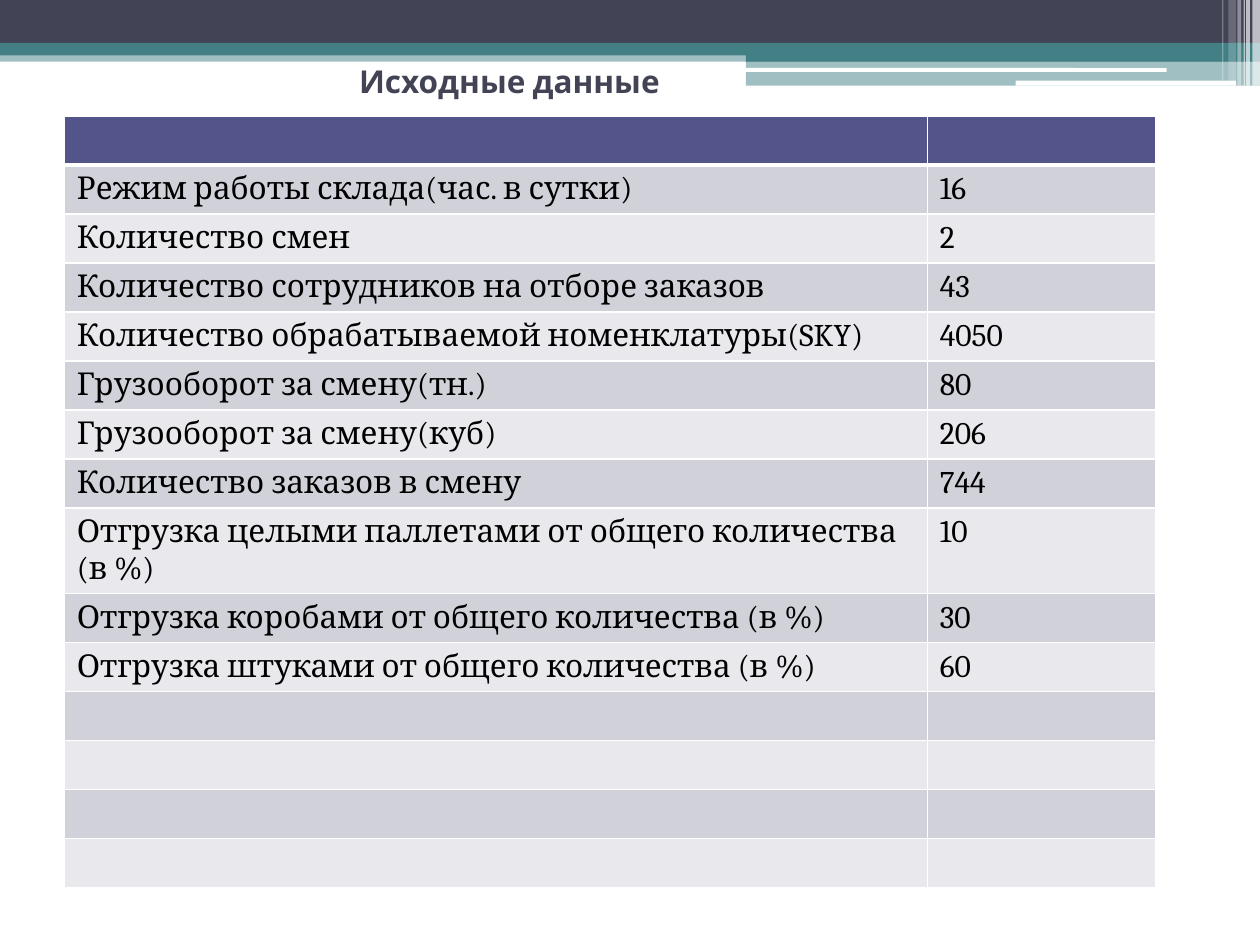
from lxml import etree
from pptx import Presentation
from pptx.dml.color import RGBColor
from pptx.enum import shapes, text
from pptx.oxml.ns import qn
from pptx.util import Inches, Pt

COLORS = {
    "dark": "424456", "teal": "438086", "white": "FFFFFF", "black": "000000",
    "header": "53548A", "odd": "D1D1DA", "even": "E9E9ED",
}


def paint(fill, name, alpha=100):
    fill.solid()
    fill.fore_color.rgb = RGBColor.from_string(COLORS[name])
    if alpha < 100:
        clr = fill._xPr.find(".//" + qn("a:srgbClr"))
        etree.SubElement(clr, qn("a:alpha"), val=str(alpha * 1000))


def add_border(cell, side, width):
    ln = etree.SubElement(cell._tc.get_or_add_tcPr(), qn(f"a:ln{side}"), w=str(Pt(width)))
    fill = etree.SubElement(ln, qn("a:solidFill"))
    etree.SubElement(fill, qn("a:srgbClr"), val=COLORS["white"])


prs = Presentation()
prs.slide_width, prs.slide_height = Inches(10), Inches(7.5)
s = prs.slides.add_slide(prs.slide_layouts[5])

# Header bands and the stripes in the corner: left, top, width, height, colour, opacity
RECT = shapes.MSO_SHAPE.RECTANGLE
ROUND = shapes.MSO_SHAPE.ROUNDED_RECTANGLE
bands = [
    (RECT, 0, 0.4, 10, 0.09, "teal", 50),
    (RECT, 0, 0, 10, 0.34, "dark", 100),
    (RECT, 0, 0.34, 10, 0.1, "teal", 100),
    (RECT, 5.92, 0.39, 4.08, 0.1, "teal", 100),
    (RECT, 5.92, 0.48, 4.08, 0.2, "teal", 50),
    (ROUND, 5.91, 0.54, 3.35, 0.03, "white", 100),
    (ROUND, 8.06, 0.64, 1.75, 0.04, "white", 100),
]
stripes = [
    (9.94, 0.06, 0.68, 65), (9.89, 0.03, 0.68, 65), (9.87, 0.01, 0.68, 60),
    (9.82, 0.03, 0.68, 40), (9.75, 0.06, 0.64, 20), (9.7, 0.01, 0.64, 30),
]
bands += [(RECT, x, 0, w, h, "white", alpha) for x, w, h, alpha in stripes]
for kind, x, y, w, h, color, alpha in bands:
    sp = s.shapes.add_shape(kind, Inches(x), Inches(y), Inches(w), Inches(h))
    sp.shadow.inherit = False
    sp.line.fill.background()
    paint(sp.fill, color, alpha)

# Title, in front of the bands
title = s.shapes.title
s.shapes._spTree.append(title._element)
title.left, title.top = Inches(0.5), Inches(0.3)
title.width, title.height = Inches(7.57), Inches(0.54)
tf = title.text_frame
tf.text = "Исходные данные"
tf.vertical_anchor = text.MSO_ANCHOR.BOTTOM
tf.margin_left = Inches(2.35)
p = tf.paragraphs[0]
p.alignment = text.PP_ALIGN.LEFT
font = p.runs[0].font
font.name, font.size, font.bold = "Cabin", Pt(18), True
font.color.rgb = RGBColor.from_string(COLORS["dark"])

# Table of warehouse data
rows = [
    ("", ""),
    ("Режим работы склада(час. в сутки)", "16"),
    ("Количество смен", "2"),
    ("Количество сотрудников на отборе заказов", "43"),
    ("Количество обрабатываемой номенклатуры(SKY)", "4050"),
    ("Грузооборот за смену(тн.)", "80"),
    ("Грузооборот за смену(куб)", "206"),
    ("Количество заказов в смену", "744"),
    ("Отгрузка целыми паллетами от общего количества (в %)", "10"),
    ("Отгрузка коробами от общего количества (в %)", "30"),
    ("Отгрузка штуками от общего количества (в %)", "60"),
] + [("", "")] * 4
table = s.shapes.add_table(len(rows), 2, Inches(0.51), Inches(0.92),
                           Inches(8.66), Inches(6)).table
table.columns[0].width, table.columns[1].width = Inches(6.85), Inches(1.81)

for i, values in enumerate(rows):
    table.rows[i].height = Inches(0.31)  # rows grow to fit their text
    color = "header" if i == 0 else "odd" if i % 2 else "even"
    for j, value in enumerate(values):
        cell = table.cell(i, j)
        for side in "LRTB":
            add_border(cell, side, 3 if (i, side) in [(0, "B"), (1, "T")] else 1)
        paint(cell.fill, color)
        p = cell.text_frame.paragraphs[0]
        if value:
            p.text = value
            font = p.runs[0].font
            font.name, font.size = "Cambria", Pt(18)
            font.color.rgb = RGBColor.from_string(COLORS["black"])
        else:
            end = etree.SubElement(p._p, qn("a:endParaRPr"), sz="1800")
            etree.SubElement(end, qn("a:latin"), typeface="Cambria")

prs.save("out.pptx")
